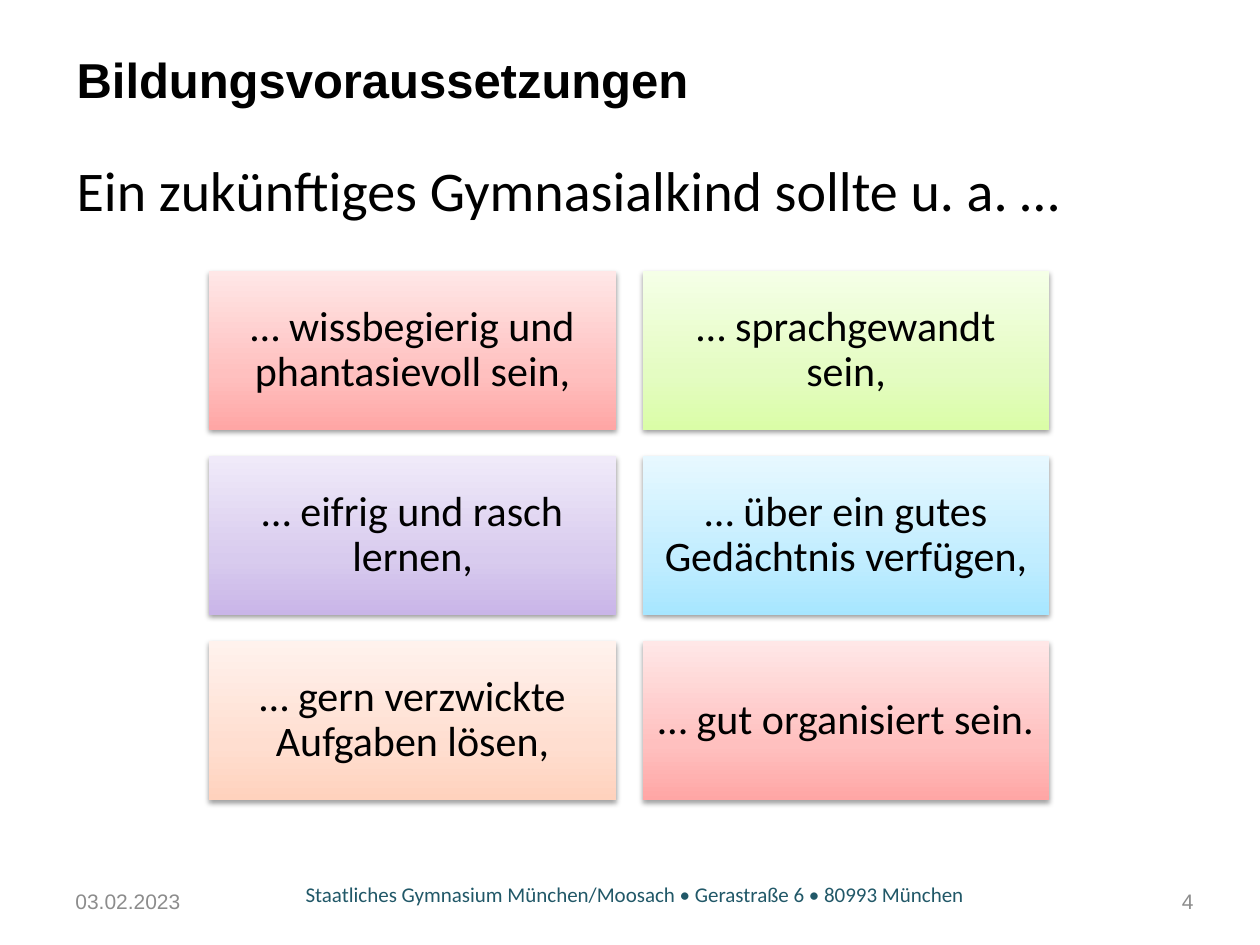
from lxml import etree
from pptx import Presentation
from pptx.dml.color import RGBColor
from pptx.enum import shapes, text
from pptx.oxml import ns
from pptx.util import Inches, Pt

BLACK, GREY, TEAL = "000000", "8C8C8C", "215868"
RED = ("FFA6A5", "FFC0BF", "FFE7E7")
GREEN = ("DAFDA7", "E4FCC2", "F5FFE7")
PURPLE = ("C9B5E8", "D8CBEE", "F0EAF9")
BLUE = ("A7E6FF", "C1EDFF", "E7F8FF")
ORANGE = ("FFD2BD", "FFDED0", "FFF2ED")

CARDS = [
    ("… wissbegierig und phantasievoll sein,", RED),
    ("… sprachgewandt sein,", GREEN),
    ("… eifrig und rasch lernen,", PURPLE),
    ("… über ein gutes Gedächtnis verfügen,", BLUE),
    ("… gern verzwickte Aufgaben lösen,", ORANGE),
    ("… gut organisiert sein.", RED),
]
COLUMNS = 2
CARD_WIDTH, CARD_HEIGHT, GAP = 3.23, 1.26, 0.21
CARD_LEFT, CARD_TOP = 1.66, 2.15

LEFT, CENTER, RIGHT = text.PP_ALIGN.LEFT, text.PP_ALIGN.CENTER, text.PP_ALIGN.RIGHT
TOP, MIDDLE = text.MSO_ANCHOR.TOP, text.MSO_ANCHOR.MIDDLE


def rgb(color):
    return RGBColor.from_string(color)


def add_xml(parent, tag, **attributes):
    """Append a DrawingML element and return it."""
    return etree.SubElement(parent, ns.qn("a:" + tag), attributes)


class SlideBuilder:
    def __init__(self, page):
        self.page = page

    def set_words(self, box, words, size, font="Calibri", color=BLACK, bold=False,
                  align=LEFT, anchor=TOP, spacing=1.0):
        frame = box.text_frame
        frame.word_wrap = True
        frame.vertical_anchor = anchor
        frame.text = words
        para = frame.paragraphs[0]
        para.alignment = align
        para.line_spacing = spacing
        span = para.runs[0]
        span.font.name = font
        span.font.size = Pt(size)
        span.font.bold = bold
        span.font.color.rgb = rgb(color)

    def label(self, left, top, width, height, words, size, **style):
        box = self.page.shapes.add_textbox(
            Inches(left), Inches(top), Inches(width), Inches(height))
        self.set_words(box, words, size, **style)

    def card(self, left, top, words, colors):
        box = self.page.shapes.add_shape(
            shapes.MSO_SHAPE.RECTANGLE, Inches(left), Inches(top),
            Inches(CARD_WIDTH), Inches(CARD_HEIGHT))
        self.shade(box, colors)
        box.line.fill.background()
        self.drop_shadow(box)
        frame = box.text_frame
        frame.margin_top = frame.margin_bottom = Inches(0.1)
        self.set_words(box, words, 24, align=CENTER, anchor=MIDDLE, spacing=0.9)

    def shade(self, box, colors):
        """Fill with a three-stop gradient running from bottom to top."""
        gradient = add_xml(box.element.spPr, "gradFill", rotWithShape="1")
        stops = add_xml(gradient, "gsLst")
        for percent, color in zip((0, 35, 100), colors):
            stop = add_xml(stops, "gs", pos=str(percent * 1000))
            add_xml(stop, "srgbClr", val=color)
        add_xml(gradient, "lin", ang=str(270 * 60000), scaled="0")

    def drop_shadow(self, box):
        effects = add_xml(box.element.spPr, "effectLst")
        shadow = add_xml(effects, "outerShdw", blurRad=str(Pt(3.1)),
                         dist=str(Pt(1.6)), dir=str(90 * 60000), rotWithShape="0")
        color = add_xml(shadow, "srgbClr", val=BLACK)
        add_xml(color, "alpha", val="38000")


def main():
    deck = Presentation()
    deck.slide_width, deck.slide_height = Inches(10), Inches(7.5)
    builder = SlideBuilder(deck.slides.add_slide(deck.slide_layouts[6]))

    builder.label(0.51, 0.36, 9, 0.59, "Bildungsvoraussetzungen", 28,
                  font="Arial", bold=True, anchor=MIDDLE, spacing=0.9)
    builder.label(0.51, 1.29, 9.21, 0.6,
                  "Ein zukünftiges Gymnasialkind sollte u. a. …", 32, spacing=0.8)

    for index, (words, colors) in enumerate(CARDS):
        row, column = divmod(index, COLUMNS)
        builder.card(CARD_LEFT + column * (CARD_WIDTH + GAP),
                     CARD_TOP + row * (CARD_HEIGHT + GAP), words, colors)

    builder.label(0.5, 6.95, 1.11, 0.4, "03.02.2023", 12,
                  font="Arial", color=GREY, anchor=MIDDLE)
    builder.label(1.77, 6.95, 6.54, 0.4,
                  "Staatliches Gymnasium München/Moosach • Gerastraße 6 • 80993 München",
                  12, color=TEAL, align=CENTER)
    builder.label(8.46, 6.95, 1.11, 0.4, "4", 12,
                  font="Arial", color=GREY, align=RIGHT, anchor=MIDDLE)

    deck.save("out.pptx")


if __name__ == "__main__":
    main()
